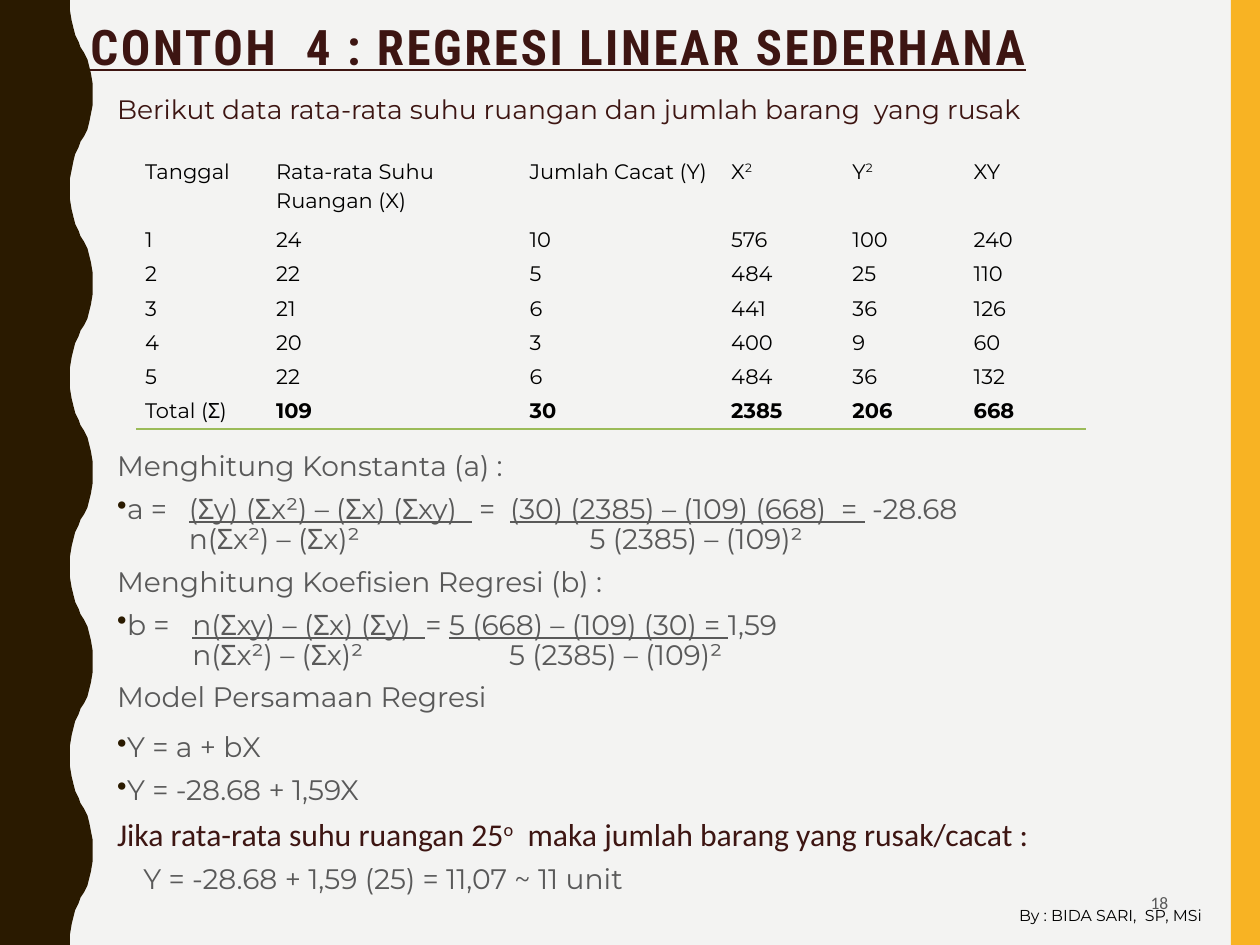
"""Build the slide on simple linear regression with its data table and worked formulas."""
from lxml import etree
from pptx import Presentation
from pptx import util as u
from pptx.dml.color import RGBColor
from pptx.enum import shapes, text
from pptx.oxml.ns import qn

Pt = u.Pt
DARK, MAROON, GREY, BLACK = "2A1A00", "3D1512", "595959", "000000"
BODY = "Montserrat"


def rgb(value):
    return RGBColor.from_string(value)


def style(r, size, font, color, bold=False):
    r.font.size, r.font.name, r.font.bold = Pt(size), font, bold
    r.font.color.rgb = rgb(color)


prs = Presentation()
prs.slide_width, prs.slide_height = Pt(720), Pt(540)
s = prs.slides.add_slide(prs.slide_layouts[6])
s.background.fill.solid()
s.background.fill.fore_color.rgb = rgb("F3F3F2")

bar = s.shapes.add_shape(shapes.MSO_SHAPE.RECTANGLE, Pt(703.4), 0, Pt(16.6), Pt(540))

trough, crest, half, steps = 39.6, 53.3, 54, 12
points = []
for i in range(10):
    start, end = (trough, crest) if i % 2 == 0 else (crest, trough)
    for k in range(1, steps + 1):
        t = k / steps
        x = start + (end - start) * (3 * t**2 - 2 * t**3)
        y = half * (i + 1.5 * t * (1 - t) + t**3)
        points.append((x, y))
fb = s.shapes.build_freeform(trough, 0, scale=Pt(1))
fb.add_line_segments(points + [(0, 540), (0, 0)], close=True)
wave = fb.convert_to_shape()

for sp, color in ((bar, "F8B323"), (wave, DARK)):
    sp.shadow.inherit = False
    sp.fill.solid()
    sp.fill.fore_color.rgb = rgb(color)
    sp.line.fill.background()

LEFT, RIGHT = text.PP_ALIGN.LEFT, text.PP_ALIGN.RIGHT
TOP, MIDDLE = text.MSO_ANCHOR.TOP, text.MSO_ANCHOR.MIDDLE
labels = [
    ("CONTOH  4 : REGRESI LINEAR SEDERHANA", (44.6, 7.2, 644.4, 41.8),
     28, "Roboto Condensed", MAROON, LEFT, MIDDLE, 0.9),
    ("Berikut data rata-rata suhu ruangan dan jumlah barang  yang rusak",
     (59.8, 51.8, 634.3, 26), 15.2, BODY, MAROON, LEFT, TOP, 0.9),
    ("18", (508.3, 501.8, 166.3, 27.4), 10, "Calibri", GREY, RIGHT, MIDDLE, 1.0),
    ("By : BIDA SARI,  SP, MSi", (575.3, 514.1, 134.6, 18),
     9, BODY, BLACK, LEFT, TOP, 1.0),
]
for label, box, size, font, color, align, anchor, spacing in labels:
    tf = s.shapes.add_textbox(*map(Pt, box)).text_frame
    tf.word_wrap = True
    tf.vertical_anchor = anchor
    tf.text = label
    p = tf.paragraphs[0]
    p.alignment, p.line_spacing = align, spacing
    r = p.runs[0]
    style(r, size, font, color)
    if size == 28:
        r.font.bold = r.font.underline = True
        r.font._element.set("spc", "150")

rows = [
    ("Tanggal", "Rata-rata Suhu Ruangan (X)", "Jumlah Cacat (Y)", "X^2", "Y^2", "XY"),
    ("1", "24", "10", "576", "100", "240"),
    ("2", "22", "5", "484", "25", "110"),
    ("3", "21", "6", "441", "36", "126"),
    ("4", "20", "3", "400", "9", "60"),
    ("5", "22", "6", "484", "36", "132"),
    ("Total (Σ)", "109", "30", "2385", "206", "668"),
]
widths = [74.9, 144.9, 115.2, 69.3, 69.3, 69.3]
last = len(rows) - 1
tbl = s.shapes.add_table(len(rows), len(widths), Pt(77.9), Pt(88.6),
                         Pt(sum(widths)), Pt(156.9)).table
tbl.first_row = tbl.horz_banding = False
tbl._tbl.tblPr.find(qn("a:tableStyleId")).text = "{2D5ABB26-0587-4C30-8999-92F81FD0307C}"
for col, width in zip(tbl.columns, widths):
    col.width = Pt(width)
for i, row in enumerate(rows):
    tbl.rows[i].height = Pt(39 if i == 0 else 19.6)
    for j, value in enumerate(row):
        cell = tbl.cell(i, j)
        cell.margin_left = cell.margin_right = Pt(5)
        cell.margin_top = cell.margin_bottom = 0
        p = cell.text_frame.paragraphs[0]
        p.line_spacing = 1.15
        for k, part in enumerate(value.split("^")):
            r = p.add_run()
            r.text = part
            style(r, 12, BODY, BLACK, bold=i == last and j > 0)
            if k:
                r.font._element.set("baseline", "30000")
        if i == last:
            ln = etree.SubElement(cell._tc.get_or_add_tcPr(), qn("a:lnB"), w=str(Pt(1)))
            fill = etree.SubElement(ln, qn("a:solidFill"))
            etree.SubElement(fill, qn("a:srgbClr"), val="9BBB59")
        cell.fill.background()

formulas = [
    (["Menghitung Konstanta (a) :"], "", [], False, 0.9, 0, 0),
    (["a =\t", "(Σy) (Σx²) – (Σx) (Σxy)  ", " =  ",
      "(30) (2385) – (109) (668)  = ", " -28.68"],
     "\tn(Σx²) – (Σx)²\t5 (2385) – (109)²", [41, 68, 270], True, 0.9, 7, 0),
    (["Menghitung Koefisien Regresi (b) :"], "", [], False, 0.9, 7, 0),
    (["b =\t", "n(Σxy) – (Σx) (Σy)  ", "= ", "5 (668) – (109) (30) = ", "1,59"],
     "\tn(Σx²) – (Σx)²\t5 (2385) – (109)²", [43, 63.5, 224], True, 0.9, 7, 0),
    (["Model Persamaan Regresi"], "", [], False, 0.95, 6, 10),
    (["Y = a + bX"], "", [], True, 0.95, 0, 6),
    (["Y = -28.68 + 1,59X"], "", [], True, 0.95, 0, 6),
    (["Jika rata-rata suhu ruangan 25", "o", "  maka jumlah barang yang rusak/cacat :"],
     "", [], False, 0.95, 0, 6),
    (["Y = -28.68 + 1,59 (25) = 11,07 ~ 11 unit"], "", [], False, 0.95, 0, 0),
]
tf = s.shapes.add_textbox(Pt(59.8), Pt(254.8), Pt(634.3), Pt(265)).text_frame
tf.word_wrap = True
for i, (parts, denominators, stops, bullet, spacing, before, after) in enumerate(formulas):
    p = tf.paragraphs[0] if i == 0 else tf.add_paragraph()
    p.line_spacing, p.space_before, p.space_after = spacing, Pt(before), Pt(after)
    question = parts[0].startswith("Jika")
    look = (18.1, "Calibri", MAROON) if question else (16.1, BODY, GREY)
    for k, part in enumerate(parts):
        r = p.add_run()
        r.text = part
        style(r, *look)
        if k % 2 and question:
            r.font._element.set("baseline", "30000")
        elif k % 2:
            r.font.underline = True
    if denominators:
        p.add_line_break()
        etree.SubElement(p._p.find(qn("a:br")), qn("a:rPr"), sz="1610")
        r = p.add_run()
        r.text = denominators
        style(r, *look)
    pPr = p._p.get_or_add_pPr()
    pPr.set("marL", str(Pt(15 if i == len(formulas) - 1 else 0)))
    pPr.set("indent", "0")
    if bullet:
        clr = etree.SubElement(pPr, qn("a:buClr"))
        etree.SubElement(clr, qn("a:srgbClr"), val=DARK)
        etree.SubElement(pPr, qn("a:buChar"), char="•")
    if stops:
        tabs = etree.SubElement(pPr, qn("a:tabLst"))
        for stop in stops:
            etree.SubElement(tabs, qn("a:tab"), pos=str(Pt(stop)), algn="l")

prs.save("out.pptx")
